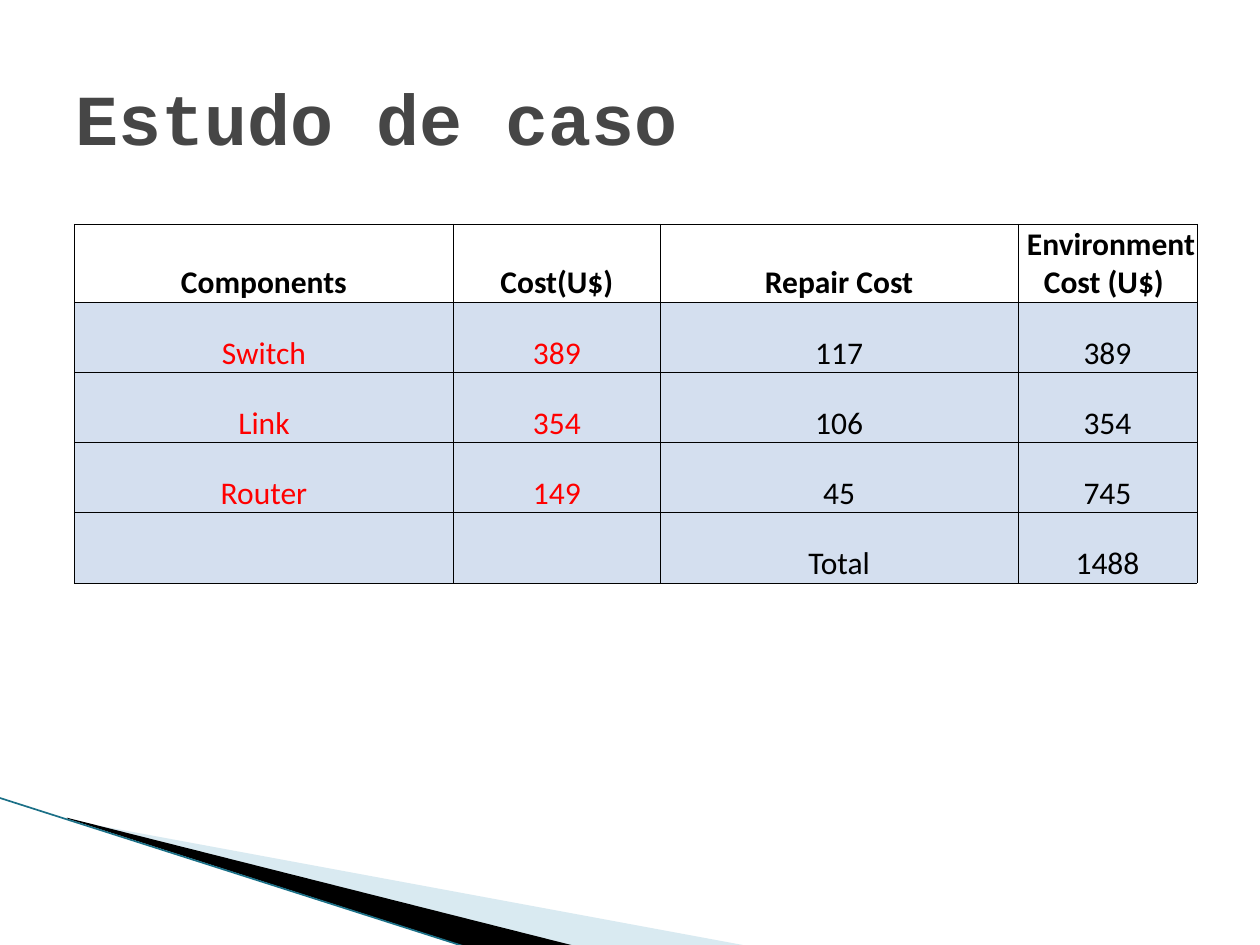
from lxml import etree
from pptx import Presentation
from pptx.dml.color import RGBColor
from pptx.enum.shapes import MSO_CONNECTOR
from pptx.enum.text import MSO_ANCHOR, PP_ALIGN
from pptx.oxml import parse_xml
from pptx.oxml.ns import nsdecls, qn
from pptx.util import Pt

STRAIGHT = MSO_CONNECTOR.STRAIGHT
MIDDLE, BOTTOM = MSO_ANCHOR.MIDDLE, MSO_ANCHOR.BOTTOM
CENTER = PP_ALIGN.CENTER

BLACK, RED, ROW_BLUE = "000000", "FF0000", "D4DFEF"
COLUMN_WIDTHS = [216.7, 118.1, 204.5, 102.2]
HEADER_HEIGHT, ROW_HEIGHT = 44.6, 40.1
HEADER = [" Components ", " Cost(U$) ", " Repair Cost ", " Environment Cost (U$) "]
COSTS = [
    ["Switch", "389", "117", "389"],
    ["Link", "354", "106", "354"],
    ["Router", "149", "45", "745"],
    ["", "", "Total", "1488"],
]


def rgb(value):
    return RGBColor.from_string(value)


def add_run(paragraph, text, font_name, size, color, bold):
    run = paragraph.add_run()
    run.text = text
    run.font.name = font_name
    run.font.size = Pt(size)
    run.font.bold = bold
    run.font.color.rgb = rgb(color)


def add_wedge(slide, points, color, opacity=100):
    """Draw a closed, unlined outline through points."""
    start, *others = [(Pt(x), Pt(y)) for x, y in points]
    builder = slide.shapes.build_freeform(*start)
    builder.add_line_segments(others, close=True)
    wedge = builder.convert_to_shape()
    wedge.shadow.inherit = False
    wedge.line.fill.background()
    wedge.fill.solid()
    wedge.fill.fore_color.rgb = rgb(color)
    if opacity < 100:
        fill_color = wedge.fill._xPr.find(qn("a:solidFill"))[0]
        etree.SubElement(fill_color, qn("a:alpha"), val=str(opacity * 1000))


def add_edge(slide, start, end, color, width):
    edge = slide.shapes.add_connector(STRAIGHT, *map(Pt, start + end))
    edge.line.color.rgb = rgb(color)
    edge.line.width = Pt(width)
    etree.SubElement(edge._element.spPr, qn("a:effectLst"))


def add_title(slide, text):
    frame = slide.shapes.add_textbox(Pt(36), Pt(21.6), Pt(648), Pt(90)).text_frame
    frame.word_wrap = True
    frame.vertical_anchor = MIDDLE
    add_run(frame.paragraphs[0], text, "Courier New", 41, "464646", True)


def set_borders(cell, color, width):
    properties = cell._tc.get_or_add_tcPr()
    for position, side in enumerate(["lnL", "lnR", "lnT", "lnB"]):
        properties.insert(position, parse_xml(
            f'<a:{side} {nsdecls("a")} w="{Pt(width)}"><a:solidFill>'
            f'<a:srgbClr val="{color}"/></a:solidFill></a:{side}>'))


def fill_cell(cell, text, color, bold, background):
    cell.margin_left = cell.margin_right = cell.margin_top = Pt(0.7)
    cell.margin_bottom = 0
    cell.vertical_anchor = BOTTOM
    if background:
        cell.fill.solid()
        cell.fill.fore_color.rgb = rgb(background)
    else:
        cell.fill.background()
    set_borders(cell, BLACK, 0.5)
    if text:
        paragraph = cell.text_frame.paragraphs[0]
        paragraph.alignment = CENTER
        add_run(paragraph, text, "Calibri", 18, color, bold)


def add_cost_table(slide, left, top):
    rows = [HEADER] + COSTS
    heights = [HEADER_HEIGHT] + [ROW_HEIGHT] * len(COSTS)
    table = slide.shapes.add_table(
        len(rows), len(HEADER), Pt(left), Pt(top),
        Pt(sum(COLUMN_WIDTHS)), Pt(sum(heights))).table
    table.first_row = table.horz_banding = False
    for column, width in zip(table.columns, COLUMN_WIDTHS):
        column.width = Pt(width)
    for r, (texts, height) in enumerate(zip(rows, heights)):
        table.rows[r].height = Pt(height)
        is_header = r == 0
        for c, text in enumerate(texts):
            color = RED if c < 2 and not is_header else BLACK
            background = None if is_header else ROW_BLUE
            fill_cell(table.cell(r, c), text, color, is_header, background)


def main():
    presentation = Presentation()
    presentation.slide_width, presentation.slide_height = Pt(720), Pt(540)
    slide = presentation.slides.add_slide(presentation.slide_layouts[6])
    add_wedge(slide, [(39.6, 468.7), (428.4, 540.7), (328.3, 540.7), (39.6, 468)],
              "A0CBDC", 40)
    add_wedge(slide, [(38.2, 467.3), (329, 540.7), (267.8, 541.4), (38.9, 468)], BLACK)
    add_edge(slide, (-0.7, 455.8), (267.1, 541.4), "1B7087", 0.95)
    add_title(slide, "Estudo de caso")
    add_cost_table(slide, 42.5, 128.2)
    presentation.save("out.pptx")


if __name__ == "__main__":
    main()
